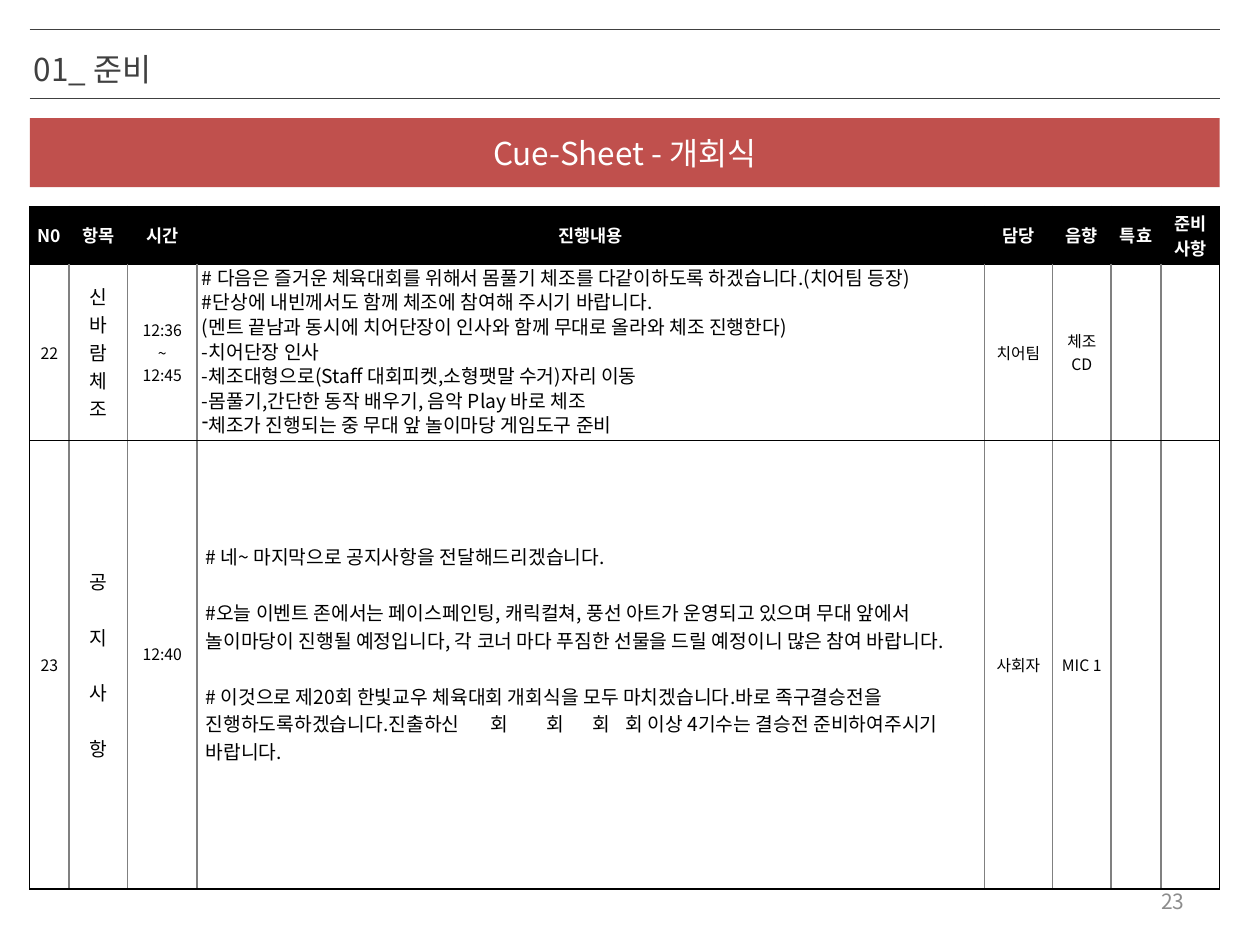
from lxml import etree
from pptx import Presentation
from pptx.dml.color import RGBColor
from pptx.enum.shapes import MSO_CONNECTOR, MSO_SHAPE
from pptx.enum.text import MSO_ANCHOR, MSO_AUTO_SIZE, PP_ALIGN
from pptx.oxml.ns import qn
from pptx.util import Pt

LEFT, MID, RIGHT = PP_ALIGN.LEFT, PP_ALIGN.CENTER, PP_ALIGN.RIGHT
TOP, CENTER = MSO_ANCHOR.TOP, MSO_ANCHOR.MIDDLE
NONE = MSO_AUTO_SIZE.NONE
RECT, LINE = MSO_SHAPE.RECTANGLE, MSO_CONNECTOR.STRAIGHT
FONT = "Noto Sans CJK KR"
BLACK, WHITE, DARK, GREY, RED = "000000", "FFFFFF", "404040", "808080", "C0504D"

COLS = [22.5, 33.5, 39.5, 450, 39, 33.5, 28.5, 33.5]
ROWS = [33, 100.5, 256.5]
LARGE = (1, 3)
HEAD = ["N0", "항목", "시간", "진행내용", "담당", "음향", "특효", "준비\n사항"]
WARMUP = [
    "# 다음은 즐거운 체육대회를 위해서 몸풀기 체조를 다같이하도록 하겠습니다.(치어팀 등장)",
    "#단상에 내빈께서도 함께 체조에 참여해 주시기 바랍니다.",
    "(멘트 끝남과 동시에 치어단장이 인사와 함께 무대로 올라와 체조 진행한다)",
    "-치어단장 인사",
    "-체조대형으로(Staff 대회피켓,소형팻말 수거)자리 이동",
    "-몸풀기,간단한 동작 배우기, 음악 Play 바로 체조",
    "체조가 진행되는 중 무대 앞 놀이마당 게임도구 준비",
]
NOTICE = [
    "# 네~ 마지막으로 공지사항을 전달해드리겠습니다.",
    "#오늘 이벤트 존에서는 페이스페인팅, 캐릭컬쳐, 풍선 아트가 운영되고 있으며 무대 앞에서 "
    "놀이마당이 진행될 예정입니다, 각 코너 마다 푸짐한 선물을 드릴 예정이니 많은 참여 바랍니다.",
    "# 이것으로 제20회 한빛교우 체육대회 개회식을 모두 마치겠습니다.바로 족구결승전을 "
    "진행하도록하겠습니다.진출하신\t회\t회\t회\t회 이상 4기수는 결승전 준비하여주시기 바랍니다.",
]
BODY = [
    ["22", "신\n바\n람\n체\n조", "12:36\n~\n12:45", "\n".join(WARMUP),
     "치어팀", "체조CD", "", ""],
    ["23", "공\n지\n사\n항", "12:40", "\n".join(NOTICE), "사회자", "MIC 1", "", ""],
]


def rgb(code):
    """Turn a hex string into a colour."""
    return RGBColor.from_string(code)


def write(frame, text, size, color, align, bold=False):
    """Fill a text frame and format its runs."""
    frame.text = text
    for para in frame.paragraphs:
        para.alignment = align
        for run in para.runs:
            font = run.font
            font.name, font.size, font.bold = FONT, Pt(size), bold
            font.color.rgb = rgb(color)
            etree.SubElement(run._r.rPr, qn("a:ea"), typeface=FONT)


def place(shape, box):
    """Move a shape to a box given in points."""
    shape.left, shape.top, shape.width, shape.height = map(Pt, box)


def rule(slide, x, y, width):
    """Draw a thin level line."""
    line = slide.shapes.add_connector(LINE, Pt(x), Pt(y), Pt(x + width), Pt(y))
    line.line.color.rgb = rgb(DARK)
    line.line.width = Pt(0.25)
    etree.SubElement(line._element.spPr, qn("a:effectLst"))


def header(slide, box):
    """Place the title between two rules."""
    x, y, width, height = box
    rule(slide, x, y, width)
    rule(slide, x, y + height, width)
    title = slide.shapes.title
    place(title, (x - 5, y + 11.5, 516, 26))
    frame = title.text_frame
    write(frame, "01_ 준비", 18, DARK, LEFT)
    frame.auto_size, frame.vertical_anchor = NONE, TOP
    frame.paragraphs[0].line_spacing = 0.85


def banner(slide, box):
    """Draw the red band with the sheet name."""
    band = slide.shapes.add_shape(RECT, *map(Pt, box))
    band.shadow.inherit = False
    band.fill.solid()
    band.fill.fore_color.rgb = rgb(RED)
    band.line.fill.background()
    band.text_frame.vertical_anchor = CENTER
    write(band.text_frame, "Cue-Sheet - 개회식", 18, WHITE, MID)


def edge(cell, side, color, width):
    """Set the border on one side of a cell."""
    line = etree.SubElement(cell._tc.get_or_add_tcPr(), qn("a:ln" + side), w=str(Pt(width)))
    fill = etree.SubElement(line, qn("a:solidFill"))
    etree.SubElement(fill, qn("a:srgbClr"), val=color)


def style(cell, row, col):
    """Give a cell its borders, fill and margins."""
    last = len(COLS) - 1
    for side, outer in (("L", col == 0), ("R", col == last)):
        if outer or row == 0:
            edge(cell, side, BLACK, 0.75)
        else:
            edge(cell, side, GREY, 1)
    for side in "TB":
        edge(cell, side, BLACK, 0.75)
    cell.fill.solid()
    cell.fill.fore_color.rgb = rgb(WHITE if row else BLACK)
    cell.vertical_anchor = CENTER
    cell.margin_left = cell.margin_right = Pt(3)
    cell.margin_top = cell.margin_bottom = Pt(0)


def warmup(cell):
    """Set the line pitch and the dash of the warm-up script."""
    paras = cell.text_frame.paragraphs
    for para in paras:
        para.line_spacing = Pt(14)
    etree.SubElement(paras[-1]._p.get_or_add_pPr(), qn("a:buChar"), char="-")


def notice(cells):
    """Space out the notice row and set its tab stops."""
    for col in LARGE:
        for para in cells[col].text_frame.paragraphs[1:]:
            para.space_before = Pt(16)
    for col in (2, 3):
        cells[col].margin_bottom = Pt(12.5)
    cells[3].margin_left = cells[3].margin_right = Pt(5)
    props = cells[3].text_frame.paragraphs[-1]._p.get_or_add_pPr()
    tabs = etree.SubElement(props, qn("a:tabLst"))
    for stop in (163, 195, 221, 240):
        etree.SubElement(tabs, qn("a:tab"), pos=str(Pt(stop)), algn="l")


def sheet(slide, box):
    """Build the cue table."""
    frame = slide.shapes.add_table(len(ROWS), len(COLS), *map(Pt, box))
    table = frame.table
    table.first_row = table.horz_banding = False
    for part, width in zip(table.columns, COLS):
        part.width = Pt(width)
    for part, height in zip(table.rows, ROWS):
        part.height = Pt(height)
    for row, texts in enumerate([HEAD] + BODY):
        for col, text in enumerate(texts):
            cell = table.cell(row, col)
            style(cell, row, col)
            if row == 0:
                write(cell.text_frame, text, 10, WHITE, MID, True)
            else:
                size = 11 if col in LARGE else 9
                write(cell.text_frame, text, size, BLACK, LEFT if col == 3 else MID)
    warmup(table.cell(1, 3))
    notice(table.rows[2].cells)


def footer(slide, box):
    """Write the page number."""
    frame = slide.shapes.add_textbox(*map(Pt, box)).text_frame
    frame.word_wrap = True
    frame.vertical_anchor = CENTER
    write(frame, "23", 12, "8C8C8C", RIGHT)


def main():
    """Build and save the slide."""
    deck = Presentation()
    deck.slide_width, deck.slide_height = Pt(720), Pt(540)
    slide = deck.slides.add_slide(deck.slide_layouts[5])
    x, width = 17, sum(COLS)
    header(slide, (x, 16.5, width, 39.5))
    banner(slide, (x, 67.5, width, 39.5))
    sheet(slide, (x, 118, width, sum(ROWS)))
    footer(slide, (516, 500.5, 168, 29))
    deck.save("out.pptx")


if __name__ == "__main__":
    main()
